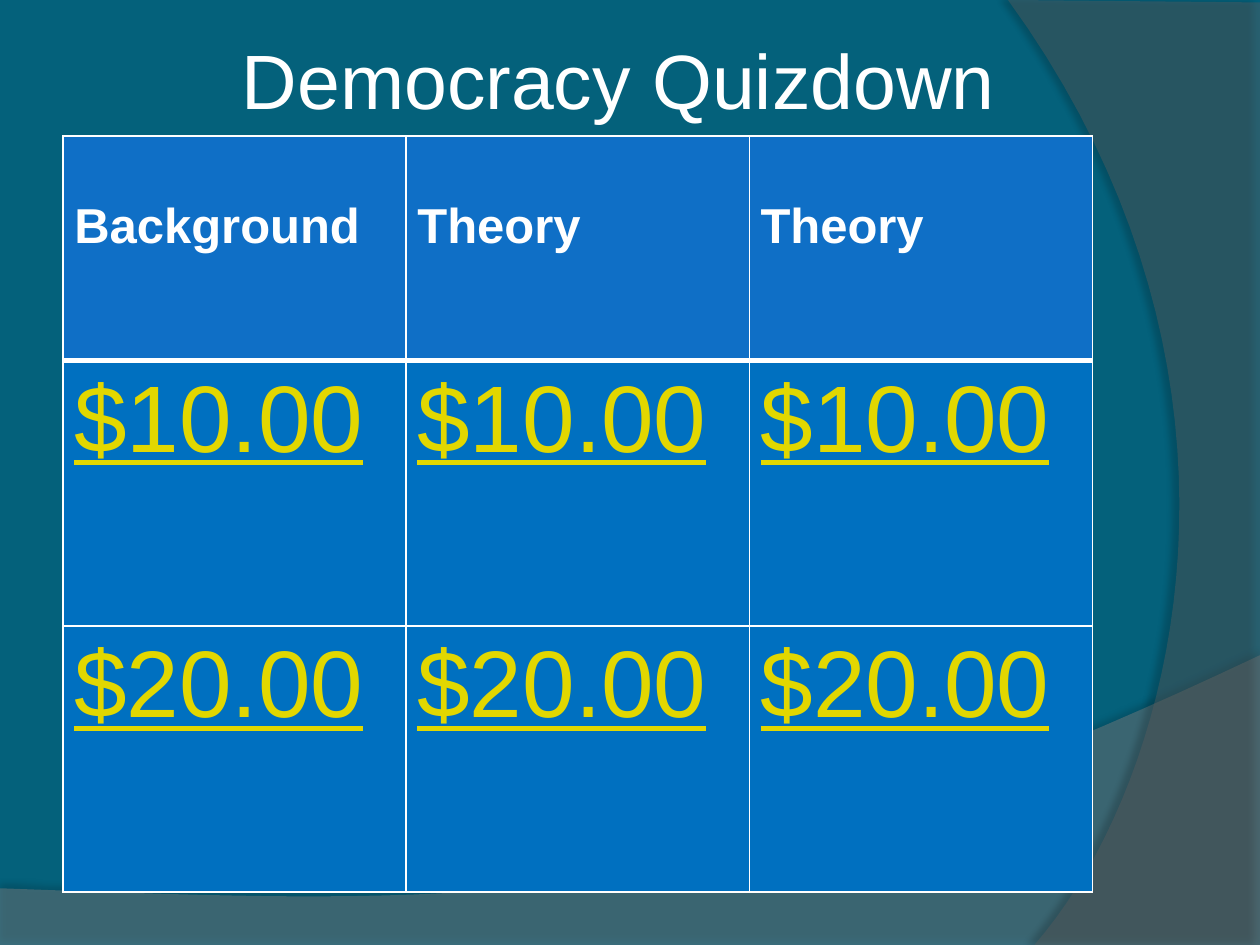
"""Build a quiz board slide about democracy."""
from lxml import etree
from pptx import Presentation
from pptx.dml.color import RGBColor
from pptx.enum import text
from pptx.oxml import ns
from pptx.util import Inches, Pt

FONT = "Arial"
WHITE = "FFFFFF"
ROWS = [
    ["Background", "Theory", "Theory"],
    ["$10.00"] * 3,
    ["$20.00"] * 3,
]


def paint(fill, color):
    """Set a solid fill from a hex string."""
    fill.solid()
    fill.fore_color.rgb = RGBColor.from_string(color)


def add_child(parent, tag, **attributes):
    """Append a DrawingML element and return it."""
    child = etree.SubElement(parent, ns.qn(tag))
    for name, value in attributes.items():
        child.set(name, str(value))
    return child


def curve(start, first, second, end, steps=40):
    """Return points along a cubic curve, without its start."""
    points = []
    for step in range(1, steps + 1):
        t = step / steps
        weights = ((1 - t) ** 3, 3 * t * (1 - t) ** 2, 3 * t * t * (1 - t), t ** 3)
        points.append(tuple(
            sum(weight * value for weight, value in zip(weights, axis))
            for axis in zip(start, first, second, end)
        ))
    return points


def add_swoosh(page, points, color, opacity, shadow_opacity, distance, angle):
    """Add a translucent background shape with a soft shadow."""
    corners = [(Inches(x), Inches(y)) for x, y in points]
    builder = page.shapes.build_freeform(*corners[0])
    builder.add_line_segments(corners[1:], close=True)
    shape = builder.convert_to_shape()
    shape.line.fill.background()
    paint(shape.fill, color)
    tint = shape._element.spPr.find(ns.qn("a:solidFill"))[0]
    add_child(tint, "a:alpha", val=opacity * 1000)
    shape.shadow.inherit = False
    effects = shape._element.spPr.find(ns.qn("a:effectLst"))
    shadow = add_child(effects, "a:outerShdw", blurRad=Pt(4), dist=Pt(distance),
                       dir=angle * 60000, algn="ctr", rotWithShape=0)
    shade = add_child(shadow, "a:srgbClr", val="000000")
    add_child(shade, "a:alpha", val=shadow_opacity * 1000)


def style_font(font, size, color, bold=False, underline=False):
    """Set the font of a paragraph."""
    font.name = FONT
    font.size = Pt(size)
    font.bold = bold
    font.underline = underline
    font.color.rgb = RGBColor.from_string(color)


def add_title(page, words):
    """Add the centred slide title."""
    box = page.shapes.add_textbox(Inches(0.33), Inches(0.17), Inches(9.33), Inches(0.91))
    frame = box.text_frame
    frame.word_wrap = True
    frame.vertical_anchor = text.MSO_ANCHOR.MIDDLE
    frame.margin_left = frame.margin_right = Inches(0.05)
    para = frame.paragraphs[0]
    para.text = words
    para.alignment = text.PP_ALIGN.CENTER
    style_font(para.font, 44, WHITE)


def set_borders(cell, top, bottom):
    """Draw white cell borders, with the given top and bottom widths."""
    properties = cell._tc.get_or_add_tcPr()
    widths = {"a:lnL": 1, "a:lnR": 1, "a:lnT": top, "a:lnB": bottom}
    for index, (tag, width) in enumerate(widths.items()):
        line = add_child(properties, tag, w=Pt(width))
        add_child(add_child(line, "a:solidFill"), "a:srgbClr", val=WHITE)
        properties.insert(index, line)


def add_board(page):
    """Add the table of categories and prizes."""
    table = page.shapes.add_table(3, 3, Inches(0.5), Inches(1.08),
                                  Inches(8.17), Inches(6)).table
    for row, height in zip(table.rows, (1.78, 2.11, 2.11)):
        row.height = Inches(height)
    for r, words in enumerate(ROWS):
        header = r == 0
        for c, word in enumerate(words):
            cell = table.cell(r, c)
            paint(cell.fill, "0F6FC6" if header else "0070C0")
            set_borders(cell, 3 if r == 1 else 1, 3 if header else 1)
            cell.margin_left = cell.margin_right = Inches(0.09)
            cell.margin_top = Inches(0.5 if header else 0.05)
            para = cell.text_frame.paragraphs[0]
            para.text = word
            if header:
                style_font(para.font, 28, WHITE, bold=True)
            else:
                style_font(para.font, 54, "E2D700", underline=True)


def main():
    """Build and save the deck."""
    deck = Presentation()
    deck.slide_width, deck.slide_height = Inches(10), Inches(7.5)
    page = deck.slides.add_slide(deck.slide_layouts[6])
    paint(page.background.fill, "04617B")
    wave = [(0, 7.51), (10, 7.51), (10, 5.2)]
    wave += curve((10, 5.2), (5.59, 7.29), (3.91, 7.19), (0, 7.05))
    add_swoosh(page, wave, "7F7F7F", 45, 35, 3.5, 270)
    arc = [(10, 0.02), (10, 7.5), (8.21, 7.5)]
    arc += curve((8.21, 7.5), (9.35, 6.19), (10.18, 3), (8, 0))
    add_swoosh(page, arc, "5E5E5E", 40, 45, 4, 180)
    add_title(page, "Democracy Quizdown ")
    add_board(page)
    deck.save("out.pptx")


if __name__ == "__main__":
    main()
